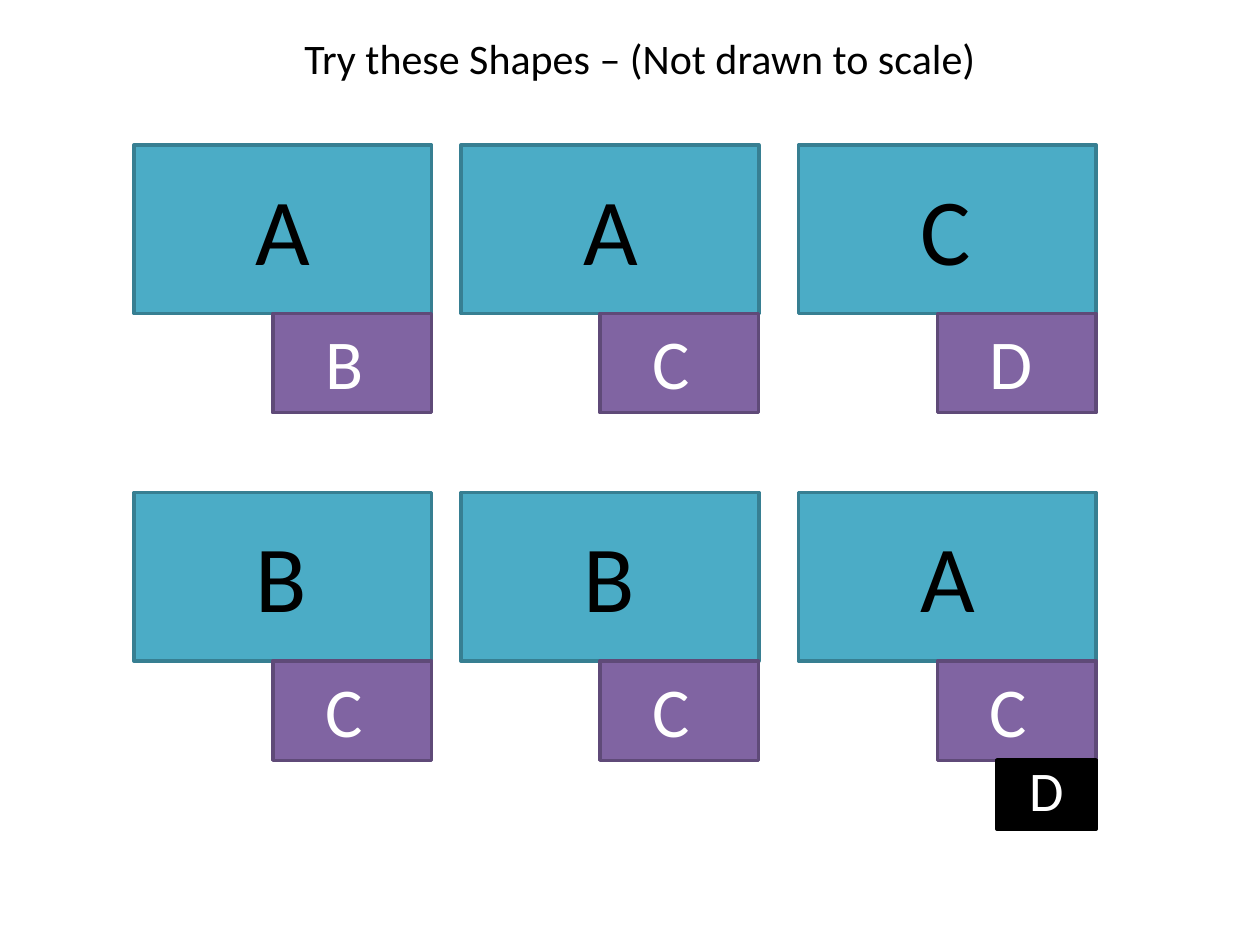
from pptx import Presentation
from pptx import util as u
from pptx.dml import color
from pptx.enum import shapes, text

COLORS = {
    "black": "000000",
    "white": "FFFFFF",
    "teal": "4BACC6",
    "teal_edge": "377F92",
    "purple": "8064A2",
    "purple_edge": "5F4A78",
}
COLUMNS = [76.5, 263.5, 456.3]
ROWS = [82.8, 281.4]
STACKS = [["AB", "AC", "CD"], ["BC", "BC", "ACD"]]
TIERS = [
    {"block": (0, 0, 170.1, 96.4), "fill": "teal", "edge": "teal_edge",
     "letter": (62.6, 11.2, 45.4, 72.7), "size": 54, "ink": "black"},
    {"block": (79.4, 96.4, 90.7, 56.7), "fill": "purple", "edge": "purple_edge",
     "letter": (102.2, 96.4, 39.6, 55.7), "size": 40, "ink": "white"},
    {"block": (113.4, 152.7, 56.7, 39.7), "fill": "black", "edge": "black",
     "letter": (124.7, 147, 39.6, 46), "size": 32, "ink": "white"},
]


def rgb(name):
    return color.RGBColor.from_string(COLORS[name])


def place(area, left, top):
    x, y, width, height = area
    return [u.Pt(value) for value in (left + x, top + y, width, height)]


def add_text(page, words, area, left=0, top=0, size=24, ink="black",
             align=text.PP_ALIGN.LEFT):
    box = page.shapes.add_textbox(*place(area, left, top))
    frame = box.text_frame
    frame.word_wrap = True
    frame.auto_size = text.MSO_AUTO_SIZE.SHAPE_TO_FIT_TEXT
    para = frame.paragraphs[0]
    para.alignment = align
    span = para.add_run()
    span.text = words
    span.font.name = "Calibri"
    span.font.size = u.Pt(size)
    span.font.color.rgb = rgb(ink)


def add_block(page, area, left, top, fill, edge):
    block = page.shapes.add_shape(shapes.MSO_SHAPE.RECTANGLE, *place(area, left, top))
    block.shadow.inherit = False
    block.fill.solid()
    block.fill.fore_color.rgb = rgb(fill)
    block.line.color.rgb = rgb(edge)
    block.line.width = u.Pt(2)


def add_stack(page, letters, left, top):
    tiers = list(zip(letters, TIERS))
    for letter, tier in tiers:
        add_block(page, tier["block"], left, top, tier["fill"], tier["edge"])
    for letter, tier in tiers:
        add_text(page, letter, tier["letter"], left, top,
                 size=tier["size"], ink=tier["ink"])


def main():
    deck = Presentation()
    deck.slide_width, deck.slide_height = u.Pt(720), u.Pt(540)
    page = deck.slides.add_slide(deck.slide_layouts[6])
    add_text(page, "Try these Shapes – (Not drawn to scale)",
             (48.2, 15.1, 635, 36), align=text.PP_ALIGN.CENTER)
    for top, row in zip(ROWS, STACKS):
        for left, letters in zip(COLUMNS, row):
            add_stack(page, letters, left, top)
    deck.save("out.pptx")


if __name__ == "__main__":
    main()
